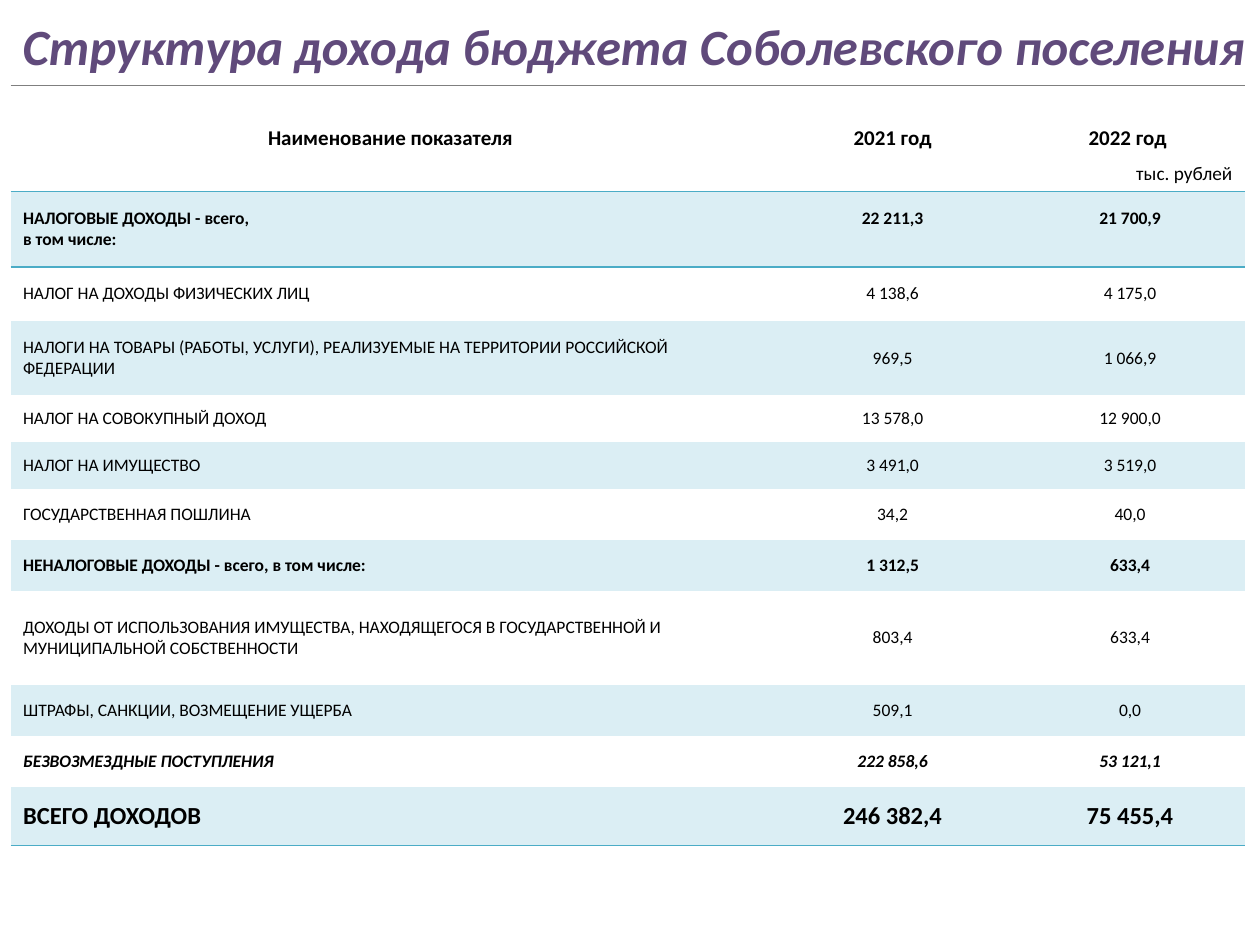
import pptx
import pptx.util
import pptx.dml.color
import pptx.enum.text
import pptx.oxml
import pptx.oxml.ns
from lxml import etree

Pt = pptx.util.Pt
ALIGN = pptx.enum.text.PP_ALIGN
MIDDLE = pptx.enum.text.MSO_ANCHOR.MIDDLE
qn = pptx.oxml.ns.qn

FONT = "Calibri"
COLORS = {"text": "000000", "title": "604A7B", "outline": "FCFCFD",
          "band": "DBEEF4", "rule": "4BACC6", "top_rule": "7F7F7F"}
NO_STYLE = "{2D5ABB26-0587-4C30-8999-92F81FD0307C}"
COL_WIDTHS = [434.2, 139.7, 131.7]

ROWS = [
    ("Наименование показателя", "2021 год", "2022 год ", 60.5, "head"),
    ("НАЛОГОВЫЕ ДОХОДЫ - всего,\nв том числе:", "22 211,3", "21 700,9", 43.2, "group"),
    ("НАЛОГ НА ДОХОДЫ ФИЗИЧЕСКИХ ЛИЦ", "4 138,6", "4 175,0", 31, "item"),
    ("НАЛОГИ НА ТОВАРЫ (РАБОТЫ, УСЛУГИ), РЕАЛИЗУЕМЫЕ НА ТЕРРИТОРИИ РОССИЙСКОЙ ФЕДЕРАЦИИ",
     "969,5", "1 066,9", 42.5, "item"),
    ("НАЛОГ НА СОВОКУПНЫЙ ДОХОД", "13 578,0", "12 900,0", 26.6, "item"),
    ("НАЛОГ НА ИМУЩЕСТВО", "3 491,0", "3 519,0", 26.6, "item"),
    ("ГОСУДАРСТВЕННАЯ ПОШЛИНА", "34,2", "40,0", 29.2, "item"),
    ("НЕНАЛОГОВЫЕ ДОХОДЫ - всего, в том числе:", "1 312,5", "633,4", 29.2, "group"),
    ("ДОХОДЫ ОТ ИСПОЛЬЗОВАНИЯ ИМУЩЕСТВА, НАХОДЯЩЕГОСЯ В ГОСУДАРСТВЕННОЙ И "
     "МУНИЦИПАЛЬНОЙ СОБСТВЕННОСТИ", "803,4", "633,4", 54, "item"),
    ("ШТРАФЫ, САНКЦИИ, ВОЗМЕЩЕНИЕ УЩЕРБА", "509,1", "0,0", 29.2, "item"),
    ("БЕЗВОЗМЕЗДНЫЕ ПОСТУПЛЕНИЯ", "222 858,6", "53 121,1", 29.2, "grant"),
    ("ВСЕГО ДОХОДОВ", "246 382,4", "75 455,4", 33.1, "total"),
]
STYLES = {"head": (12, True, False), "group": (10, True, False),
          "item": (10, False, False), "grant": (10, True, True),
          "total": (14, True, False)}


def rgb(name):
    return pptx.dml.color.RGBColor.from_string(COLORS[name])


def format_text(tf, size, bold, italic, color, align):
    for p in tf.paragraphs:
        p.alignment = align
        for r in p.runs:
            r.font.name = FONT
            r.font.size = Pt(size)
            r.font.bold = bold
            r.font.italic = italic
            r.font.color.rgb = rgb(color)


def line_element(tag, color, width):
    ln = pptx.oxml.parse_xml(
        f'<a:{tag} {pptx.oxml.ns.nsdecls("a")} w="{int(Pt(width))}">'
        f'<a:solidFill><a:srgbClr val="{COLORS[color]}"/></a:solidFill></a:{tag}>')
    return ln


def set_borders(cell, top=None, bottom=None):
    borders = [line_element(tag, *line)
               for tag, line in (("lnT", top), ("lnB", bottom)) if line]
    tcPr = cell._tc.get_or_add_tcPr()
    for i, ln in enumerate(borders):
        tcPr.insert(i, ln)


def add_title(slide, left, top, width, height):
    sp = slide.shapes.title
    sp.left, sp.top, sp.width, sp.height = Pt(left), Pt(top), Pt(width), Pt(height)
    tf = sp.text_frame
    tf.text = "Структура дохода бюджета Соболевского поселения"
    tf.word_wrap = True
    tf.auto_size = pptx.enum.text.MSO_AUTO_SIZE.NONE
    tf.vertical_anchor = MIDDLE
    format_text(tf, 29, True, True, "title", ALIGN.CENTER)
    rPr = tf.paragraphs[0].runs[0].font._element
    rPr.insert(0, line_element("ln", "outline", 1.4))


def add_income_table(slide, left, top, width, height):
    frame = slide.shapes.add_table(len(ROWS), len(COL_WIDTHS),
                                   Pt(left), Pt(top), Pt(width), Pt(height))
    table = frame.table
    table.first_row = table.horz_banding = False
    table._tbl.tblPr.find(qn("a:tableStyleId")).text = NO_STYLE
    for col, col_width in zip(table.columns, COL_WIDTHS):
        col.width = Pt(col_width)
    rule = ("rule", 1)
    last = len(ROWS) - 1
    for i, (*texts, row_height, kind) in enumerate(ROWS):
        table.rows[i].height = Pt(row_height)
        for j, text in enumerate(texts):
            cell = table.cell(i, j)
            cell.text_frame.text = text
            cell.vertical_anchor = MIDDLE
            align = ALIGN.LEFT if j == 0 and kind != "head" else ALIGN.CENTER
            format_text(cell.text_frame, *STYLES[kind], "text", align)
            if i % 2:
                cell.fill.solid()
                cell.fill.fore_color.rgb = rgb("band")
            else:
                cell.fill.background()
            if i == 0:
                set_borders(cell, top=("top_rule", 0.5), bottom=rule)
            elif i == 1:
                set_borders(cell, top=rule)
                if j:
                    cell.margin_bottom = Pt(15.6)
            elif i == last:
                set_borders(cell, bottom=rule)


def add_unit_label(slide, left, top, width, height):
    sp = slide.shapes.add_textbox(Pt(left), Pt(top), Pt(width), Pt(height))
    tf = sp.text_frame
    tf.text = "тыс. рублей"
    tf.word_wrap = False
    tf.auto_size = pptx.enum.text.MSO_AUTO_SIZE.SHAPE_TO_FIT_TEXT
    format_text(tf, 11, False, False, "text", ALIGN.RIGHT)


def main():
    prs = pptx.Presentation()
    prs.slide_width, prs.slide_height = Pt(720), Pt(540)
    slide = prs.slides.add_slide(prs.slide_layouts[5])
    add_title(slide, -31.7, 3.6, 788.4, 44.6)
    add_income_table(slide, 6, 48.8, sum(COL_WIDTHS), sum(row[3] for row in ROWS))
    add_unit_label(slide, 640.8, 88.6, 70.6, 20.9)
    prs.save("out.pptx")


if __name__ == "__main__":
    main()
